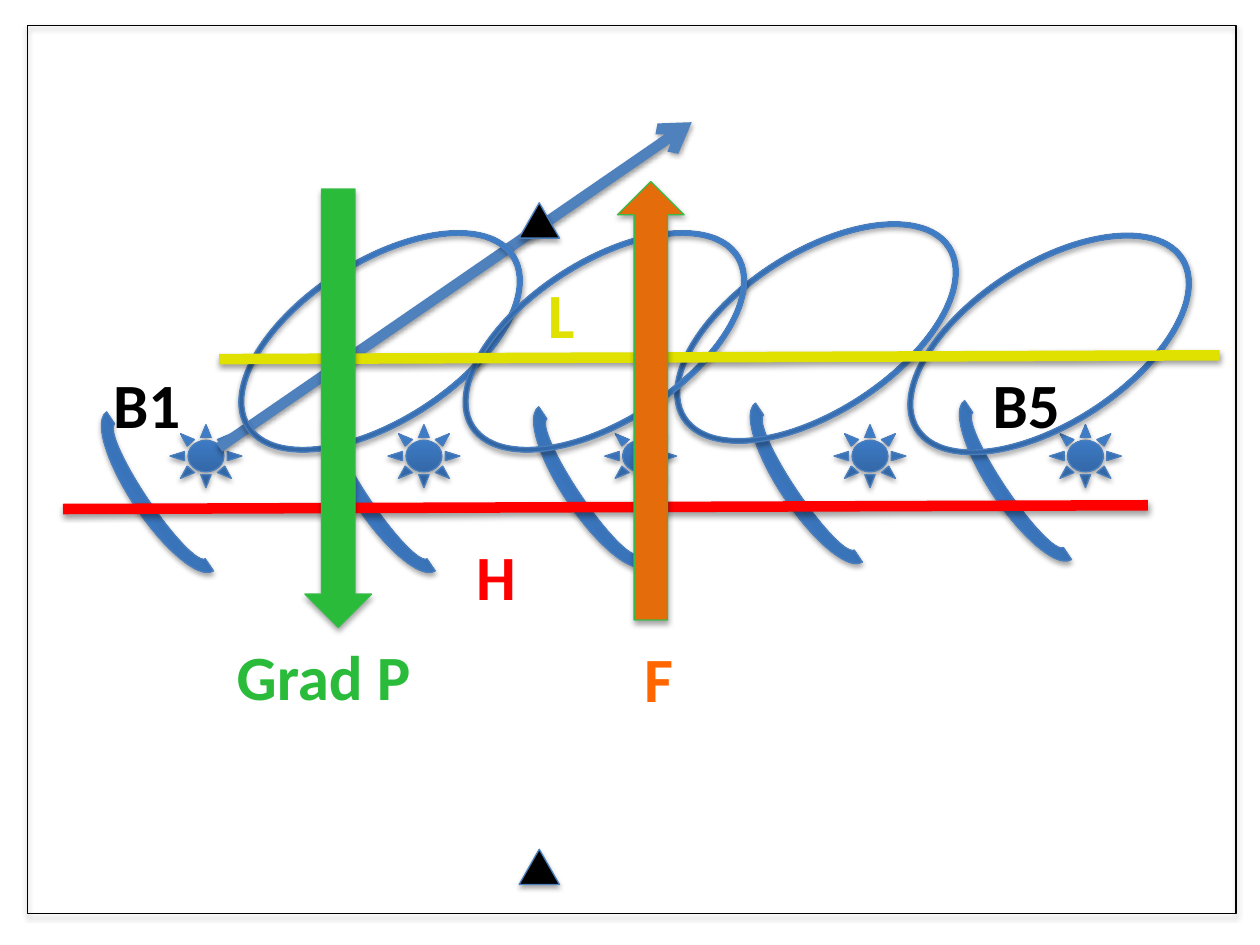
"""Build the schematic of field loops, gradient and force arrows."""
from dataclasses import dataclass
from lxml.etree import SubElement
from pptx import Presentation
from pptx.dml.color import RGBColor
from pptx.enum.shapes import MSO_CONNECTOR, MSO_SHAPE
from pptx.oxml.ns import qn
from pptx.slide import Slide
from pptx.util import Inches, Pt

COLORS = {
    "black": "000000", "outline": "4B7EBC", "blue": "4F81BD",
    "red": "FF0000", "yellow": "E1E100", "green": "2ABB3B",
    "green_edge": "37BB48", "orange": "E46C0A", "force": "FF6600",
}
GRADIENT = [(0, "2F5F99"), (80, "3D7CC7"), (100, "3A7CCB")]


def rgb(name):
    return RGBColor.from_string(COLORS[name])


@dataclass
class Diagram:
    page: Slide
    font: str = "Calibri"
    size: int = 36

    def cast_shadow(self, item, opacity, distance):
        effects = SubElement(item._element.spPr, qn("a:effectLst"))
        shadow = SubElement(effects, qn("a:outerShdw"), blurRad=str(Pt(3.1)),
                            dist=str(Pt(distance)), dir="5400000", rotWithShape="0")
        color = SubElement(shadow, qn("a:srgbClr"), val=COLORS["black"])
        SubElement(color, qn("a:alpha"), val=str(opacity * 1000))

    def fill_gradient(self, shape):
        shape.fill.gradient()
        shape.fill.gradient_angle = 90
        stops = shape._element.spPr.find(".//" + qn("a:gsLst"))
        for stop in list(stops):
            stops.remove(stop)
        for position, color in GRADIENT:
            stop = SubElement(stops, qn("a:gs"), pos=str(position * 1000))
            SubElement(stop, qn("a:srgbClr"), val=color)

    def shape(self, kind, left, top, width, height, fill="gradient",
              edge="outline", rotation=0, adjust=None):
        shape = self.page.shapes.add_shape(
            kind, Inches(left), Inches(top), Inches(width), Inches(height))
        shape.rotation = rotation
        if adjust is not None:
            shape.adjustments[0] = adjust
        if fill == "gradient":
            self.fill_gradient(shape)
        elif fill:
            shape.fill.solid()
            shape.fill.fore_color.rgb = rgb(fill)
        else:
            shape.fill.background()
        shape.line.color.rgb = rgb(edge)
        shape.line.width = Pt(0.75)
        self.cast_shadow(shape, 35, 1.8)

    def line(self, start, end, color, arrow=False):
        line = self.page.shapes.add_connector(
            MSO_CONNECTOR.STRAIGHT, *(Inches(value) for value in start + end))
        line.line.color.rgb = rgb(color)
        line.line.width = Pt(6)
        if arrow:
            SubElement(line.line._get_or_add_ln(), qn("a:tailEnd"), type="arrow")
        self.cast_shadow(line, 38, 1.6)

    def label(self, left, top, width, *spans, wrap=False):
        box = self.page.shapes.add_textbox(
            Inches(left), Inches(top), Inches(width), Inches(0.71))
        box.text_frame.word_wrap = wrap
        para = box.text_frame.paragraphs[0]
        for text, color in spans:
            span = para.add_run()
            span.text = text
            span.font.name = self.font
            span.font.size = Pt(self.size)
            span.font.bold = True
            span.font.color.rgb = rgb(color)


def main():
    deck = Presentation()
    deck.slide_width, deck.slide_height = Inches(10), Inches(7.5)
    diagram = Diagram(deck.slides.add_slide(deck.slide_layouts[6]))

    diagram.shape(MSO_SHAPE.RECTANGLE, 0.22, 0.2, 9.59, 7.05, None, "black")
    for left in (1.35, 3.08, 4.8, 6.62, 8.33):
        diagram.shape(MSO_SHAPE.SUN, left, 3.37, 0.57, 0.5)
    diagram.line((1.74, 3.55), (5.49, 0.97), "blue", arrow=True)
    diagram.label(0.8, 2.85, 1.08, ("B1", "black"), wrap=True)
    diagram.label(7.78, 2.85, 1.1, ("B5", "black"), wrap=True)
    for top in (1.61, 6.74):
        diagram.shape(MSO_SHAPE.ISOSCELES_TRIANGLE, 4.12, top, 0.32, 0.28, "black")
    for left, top in ((0.51, 3.67), (2.27, 3.67), (3.94, 3.63), (5.66, 3.6), (7.32, 3.58)):
        diagram.shape(MSO_SHAPE.BLOCK_ARC, left, top, 1.52, 0.46, rotation=236.1)
    for left, top in ((2.37, 1.44), (5.83, 1.37), (7.68, 1.46), (4.15, 1.44)):
        diagram.shape(MSO_SHAPE.DONUT, left, top, 1.3, 2.54, rotation=57.2, adjust=0.03)

    diagram.line((0.5, 4.04), (9.11, 4.01), "red")
    diagram.label(3.68, 4.22, 0.52, ("H", "red"))
    diagram.line((1.74, 2.85), (9.68, 2.82), "yellow")
    diagram.label(4.25, 2.14, 0.42, ("L", "yellow"))
    diagram.shape(MSO_SHAPE.DOWN_ARROW, 2.42, 1.5, 0.53, 3.48, "green", "green_edge")
    diagram.label(1.78, 5.01, 1.61, ("Grad P", "green"))
    diagram.shape(MSO_SHAPE.DOWN_ARROW, 4.9, 1.44, 0.53, 3.48, "orange", "green_edge",
                  rotation=180)
    diagram.label(4.9, 5.03, 0.55, (" ", "green"), ("F", "force"))
    deck.save("out.pptx")


if __name__ == "__main__":
    main()
